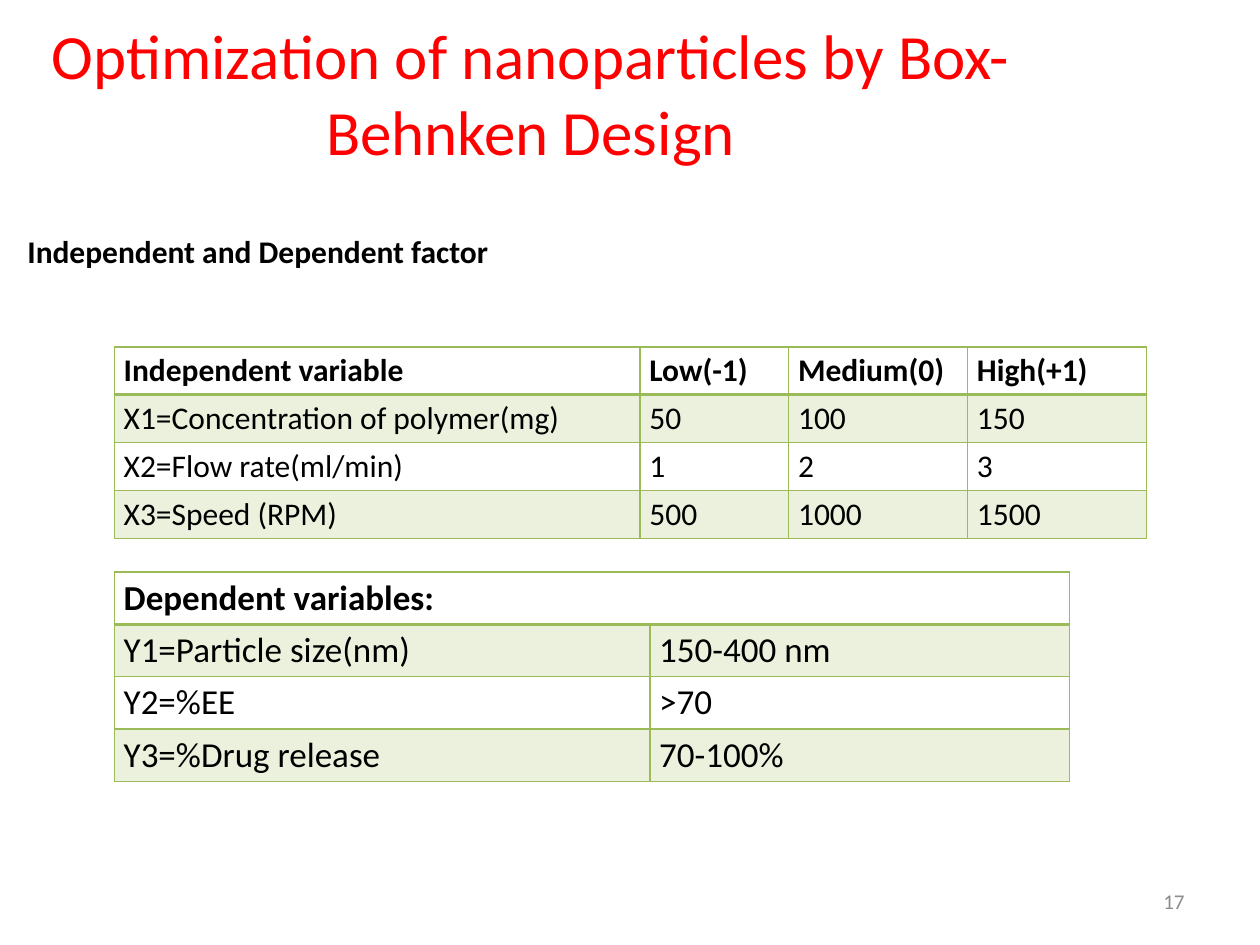
import pptx
import pptx.dml.color
import pptx.enum.text
import pptx.oxml
import pptx.oxml.ns
import pptx.util

Pt = pptx.util.Pt
ALIGN = pptx.enum.text.PP_ALIGN
ANCHOR = pptx.enum.text.MSO_ANCHOR
GREEN = "9BBB59"
BLACK = "000000"
TABLE_LEFT = 65.3

INDEPENDENT = [
    ["Independent variable", "Low(-1)", "Medium(0)", "High(+1)"],
    ["X1=Concentration of polymer(mg)", "50", "100", "150"],
    ["X2=Flow rate(ml/min)", "1", "2", "3"],
    ["X3=Speed (RPM)", "500", "1000", "1500"],
]
DEPENDENT = [
    ["Dependent variables:", ""],
    ["Y1=Particle size(nm)", "150-400 nm"],
    ["Y2=%EE", ">70"],
    ["Y3=%Drug release", "70-100%"],
]


def rgb(value):
    return pptx.dml.color.RGBColor.from_string(value)


def set_attributes(obj, values):
    for name, value in values.items():
        setattr(obj, name, value)


def write_text(tf, text, size, color=BLACK, bold=False, align=ALIGN.LEFT):
    p = tf.paragraphs[0]
    p.alignment = align
    r = p.add_run()
    r.text = text
    set_attributes(r.font, {"name": "Calibri", "size": Pt(size), "bold": bold})
    r.font.color.rgb = rgb(color)


def place(sp, left, top, width, height):
    set_attributes(sp, {"left": Pt(left), "top": Pt(top),
                        "width": Pt(width), "height": Pt(height)})


def add_title(s, text):
    sp = s.shapes.title
    place(sp, 20.2, 15.1, 566, 75.6)
    sp.text_frame.vertical_anchor = ANCHOR.MIDDLE
    write_text(sp.text_frame, text, 36, "FF0000", align=ALIGN.CENTER)


def add_text(s, box, text, size, wrap=True, anchor=ANCHOR.TOP, **style):
    tf = s.shapes.add_textbox(*map(Pt, box)).text_frame
    set_attributes(tf, {"word_wrap": wrap, "vertical_anchor": anchor})
    write_text(tf, text, size, **style)


def set_borders(cell, top, bottom):
    tc_pr = cell._tc.get_or_add_tcPr()
    for side, width in zip("LRTB", (1, 1, top, bottom)):
        tc_pr.append(pptx.oxml.parse_xml(
            f'<a:ln{side} {pptx.oxml.ns.nsdecls("a")} w="{Pt(width)}">'
            f'<a:solidFill><a:srgbClr val="{GREEN}"/></a:solidFill></a:ln{side}>'))


def tint(cell):
    """Fill the cell with green at 20 % opacity."""
    cell.fill.solid()
    cell.fill.fore_color.rgb = rgb(GREEN)
    color = cell._tc.tcPr.find(".//" + pptx.oxml.ns.qn("a:solidFill")
                               + "[last()]/" + pptx.oxml.ns.qn("a:srgbClr"))
    fill = cell._tc.tcPr.find(pptx.oxml.ns.qn("a:solidFill"))
    color = fill[0]
    color.append(pptx.oxml.parse_xml(
        f'<a:alpha {pptx.oxml.ns.nsdecls("a")} val="20000"/>'))


def format_cell(cell, row, text, size):
    set_attributes(cell, {"margin_left": Pt(5.4), "margin_right": Pt(5.4),
                          "margin_top": Pt(2.7), "margin_bottom": Pt(2.7)})
    set_borders(cell, top=2 if row == 1 else 1, bottom=2 if row == 0 else 1)
    if row % 2:
        tint(cell)
    else:
        cell.fill.background()
    if text:
        write_text(cell.text_frame, text, size, bold=row == 0)


def add_table(s, top, widths, row_height, rows, size):
    frame = s.shapes.add_table(
        len(rows), len(widths), Pt(TABLE_LEFT), Pt(top),
        Pt(sum(widths)), Pt(row_height * len(rows)))
    table = frame.table
    set_attributes(table, {"first_row": False, "horz_banding": False})
    for column, width in zip(table.columns, widths):
        column.width = Pt(width)
    for i, texts in enumerate(rows):
        table.rows[i].height = Pt(row_height)
        for j, text in enumerate(texts):
            format_cell(table.cell(i, j), i, text, size)
    return table


def main():
    prs = pptx.Presentation()
    set_attributes(prs, {"slide_width": Pt(720), "slide_height": Pt(540)})
    s = prs.slides.add_slide(prs.slide_layouts[5])
    add_title(s, "Optimization of nanoparticles by Box-Behnken Design")
    add_table(s, 198.2, [300.4, 85, 102.2, 102.2], 27.4, INDEPENDENT, 18)
    table = add_table(s, 326.8, [306, 239.8], 29.8, DEPENDENT, 20)
    table.cell(0, 0).merge(table.cell(0, 1))
    add_text(s, (8.6, 129, 280, 29), "Independent and Dependent factor", 18,
             wrap=False, bold=True)
    add_text(s, (516, 500.5, 168, 28.8), "17", 12, anchor=ANCHOR.MIDDLE,
             color="8C8C8C", align=ALIGN.RIGHT)
    prs.save("out.pptx")


if __name__ == "__main__":
    main()
